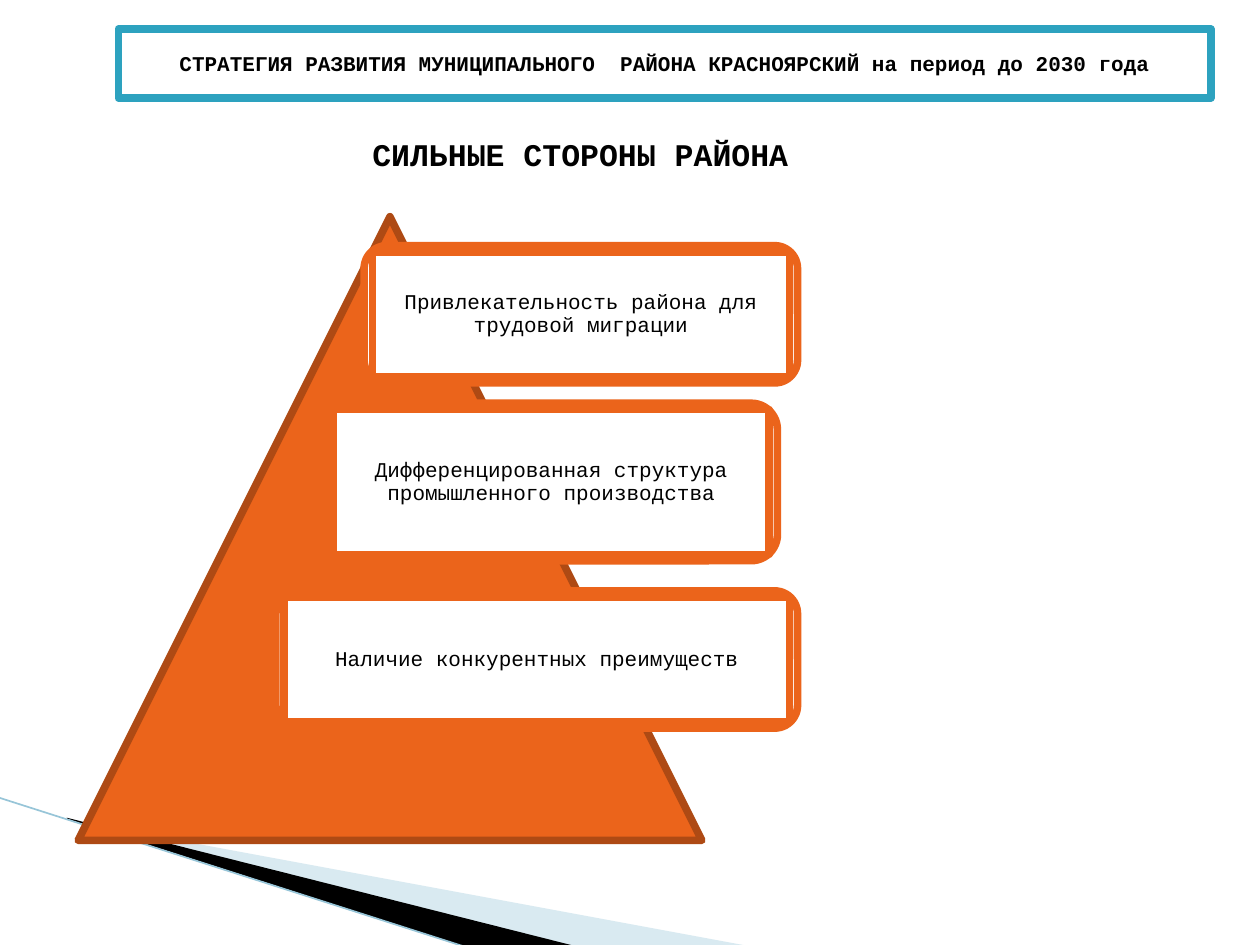
from dataclasses import dataclass

from lxml.etree import SubElement
from pptx import Presentation
from pptx.dml.color import RGBColor
from pptx.enum.shapes import MSO_CONNECTOR, MSO_SHAPE
from pptx.enum.text import MSO_ANCHOR, MSO_AUTO_SIZE, PP_ALIGN
from pptx.oxml.ns import qn
from pptx.util import Inches, Pt


@dataclass(frozen=True)
class Theme:
    font: str = "Courier New"
    ink: str = "000000"
    paper: str = "FFFFFF"
    teal: str = "2DA2BF"
    orange: str = "EB641B"
    rust: str = "AE4A14"
    mist: str = "A0CBDC"
    ray: str = "97C5D8"
    body_size: float = 12
    heading_size: float = 18
    outline: float = 4.33
    hairline: float = 0.95


@dataclass(frozen=True)
class Area:
    """Position and size in percent of the slide."""
    left: float
    top: float
    width: float
    height: float

    def inset(self, margin: float):
        return Area(self.left + margin, self.top + margin,
                    self.width - 2 * margin, self.height - 2 * margin)

    def lengths(self) -> tuple:
        return (across(self.left), down(self.top),
                across(self.width), down(self.height))


@dataclass(frozen=True)
class Strength:
    text: str
    area: Area


THEME = Theme()
SLIDE_WIDTH, SLIDE_HEIGHT = Inches(10), Inches(7.5)
PANEL_MARGIN = 0.65

STRENGTHS = [
    Strength("Привлекательность района для трудовой миграции",
             Area(28.9, 26, 34.4, 14.53)),
    Strength("Дифференцированная структура промышленного производства",
             Area(25.8, 42.67, 35.9, 16.67)),
    Strength("Наличие конкурентных преимуществ",
             Area(21.9, 62.53, 41.4, 14.53)),
]


def across(percent: float) -> int:
    return round(SLIDE_WIDTH * percent / 100)


def down(percent: float) -> int:
    return round(SLIDE_HEIGHT * percent / 100)


def color(code: str) -> RGBColor:
    return RGBColor.from_string(code)


def draw_wedge(page, points: list, fill: str, opacity: int = 100) -> None:
    corners = [(across(x), down(y)) for x, y in points]
    builder = page.shapes.build_freeform(*corners[0], scale=1.0)
    builder.add_line_segments(corners[1:], close=True)
    wedge = builder.convert_to_shape()
    wedge.shadow.inherit = False
    wedge.fill.solid()
    wedge.fill.fore_color.rgb = color(fill)
    wedge.line.fill.background()
    if opacity < 100:
        tint = wedge.fill._xPr.find(qn("a:solidFill"))[0]
        SubElement(tint, qn("a:alpha")).set("val", str(opacity * 1000))


def draw_ray(page, start: tuple, end: tuple) -> None:
    ray = page.shapes.add_connector(
        MSO_CONNECTOR.STRAIGHT, across(start[0]), down(start[1]),
        across(end[0]), down(end[1]))
    ray.line.color.rgb = color(THEME.ray)
    ray.line.width = Pt(THEME.hairline)
    SubElement(ray._element.spPr, qn("a:effectLst"))


def draw_outlined(shapes, kind: MSO_SHAPE, area: Area, fill: str, line: str):
    shape = shapes.add_shape(kind, *area.lengths())
    shape.shadow.inherit = False
    shape.fill.solid()
    shape.fill.fore_color.rgb = color(fill)
    shape.line.color.rgb = color(line)
    shape.line.width = Pt(THEME.outline)
    SubElement(shape.line._get_or_add_ln(), qn("a:round"))
    return shape


def write(box, text: str, size: float, bold: bool = False):
    frame = box.text_frame
    frame.text = text
    para = frame.paragraphs[0]
    para.alignment = PP_ALIGN.CENTER
    for span in para.runs:
        span.font.name = THEME.font
        span.font.size = Pt(size)
        span.font.bold = bold
        span.font.color.rgb = color(THEME.ink)
    return para


def draw_header(page) -> None:
    header = draw_outlined(page.shapes, MSO_SHAPE.RECTANGLE,
                           Area(9.4, 3.07, 86.7, 7.33), THEME.paper, THEME.teal)
    header.text_frame.vertical_anchor = MSO_ANCHOR.MIDDLE
    write(header, "СТРАТЕГИЯ РАЗВИТИЯ МУНИЦИПАЛЬНОГО  РАЙОНА КРАСНОЯРСКИЙ "
                  "на период до 2030 года", THEME.body_size, bold=True)


def draw_strength(page, strength: Strength) -> None:
    panel = page.shapes.add_group_shape()
    draw_outlined(panel.shapes, MSO_SHAPE.ROUNDED_RECTANGLE, strength.area,
                  THEME.paper, THEME.orange)
    label = draw_outlined(panel.shapes, MSO_SHAPE.RECTANGLE,
                          strength.area.inset(PANEL_MARGIN),
                          THEME.paper, THEME.orange)
    frame = label.text_frame
    frame.word_wrap = True
    frame.vertical_anchor = MSO_ANCHOR.MIDDLE
    frame.margin_left = frame.margin_right = Inches(0.05)
    frame.margin_top = frame.margin_bottom = Inches(0.05)
    para = write(label, strength.text, THEME.body_size)
    para.line_spacing = 0.9
    para.space_after = Pt(0.35 * THEME.body_size)


def draw_heading(page) -> None:
    heading = page.shapes.add_textbox(*Area(26.6, 13.6, 38.9, 5.33).lengths())
    heading.text_frame.word_wrap = False
    heading.text_frame.auto_size = MSO_AUTO_SIZE.SHAPE_TO_FIT_TEXT
    write(heading, "СИЛЬНЫЕ СТОРОНЫ РАЙОНА", THEME.heading_size, bold=True)


def main() -> None:
    deck = Presentation()
    deck.slide_width, deck.slide_height = SLIDE_WIDTH, SLIDE_HEIGHT
    page = deck.slides.add_slide(deck.slide_layouts[6])
    page.background.fill.solid()
    page.background.fill.fore_color.rgb = color(THEME.paper)

    draw_wedge(page, [(5.5, 86.8), (59.5, 100.13), (45.6, 100.13), (5.5, 86.67)],
               THEME.mist, opacity=40)
    draw_wedge(page, [(5.3, 86.53), (45.7, 100.13), (37.2, 100.27), (5.4, 86.67)],
               THEME.ink)
    draw_ray(page, (-0.1, 84.4), (37.1, 100.27))
    draw_header(page)
    draw_outlined(page.shapes, MSO_SHAPE.ISOSCELES_TRIANGLE,
                  Area(6.2, 22.93, 49.5, 66), THEME.orange, THEME.rust)
    for strength in STRENGTHS:
        draw_strength(page, strength)
    draw_heading(page)
    deck.save("out.pptx")


if __name__ == "__main__":
    main()
